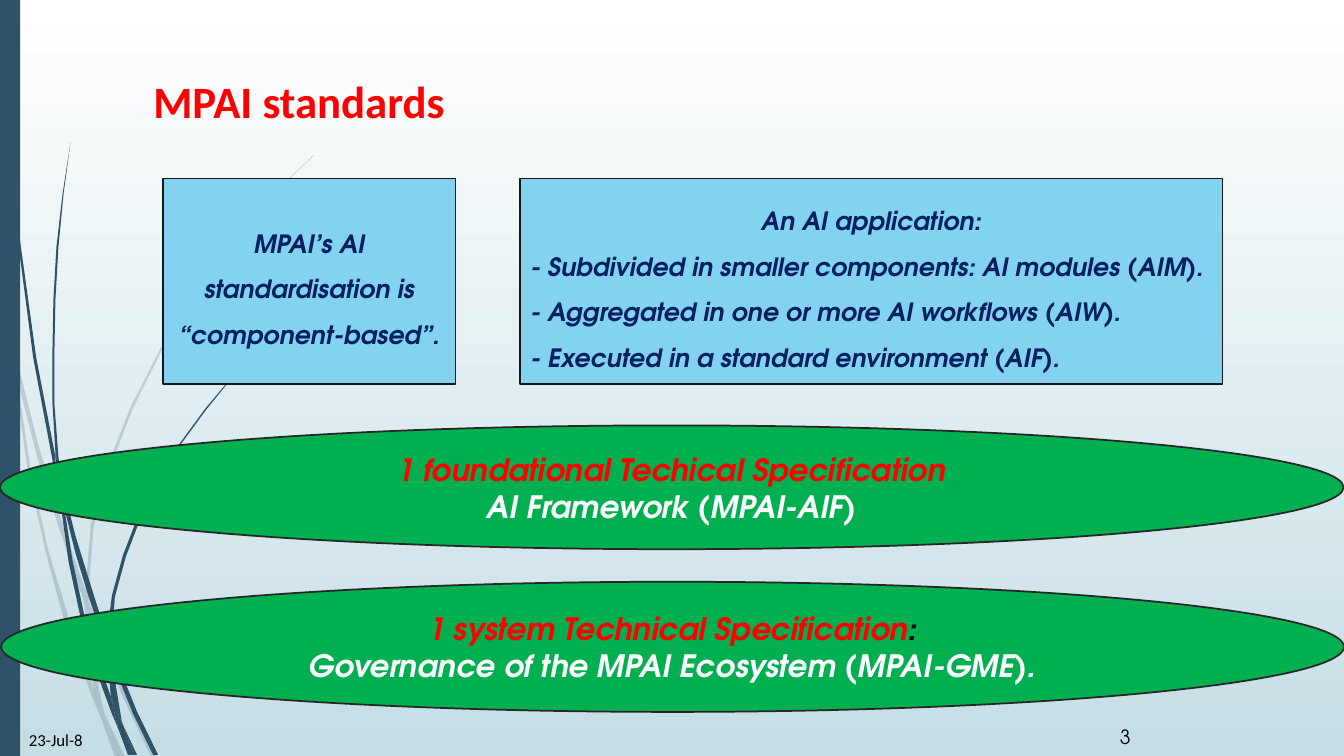
from lxml import etree
from pptx import Presentation
from pptx.dml.color import RGBColor as RGB
from pptx.enum.shapes import MSO_SHAPE as SHAPE
from pptx.enum.text import MSO_ANCHOR as ANCHOR, MSO_AUTO_SIZE as AUTO, PP_ALIGN as ALIGN
from pptx.oxml.ns import qn
from pptx.util import Cm, Pt

COLORS = {
    "white": "FFFFFF", "mist": "C5DEE5", "slate": "2E5369", "red": "FF0000",
    "black": "000000", "green": "00B050", "sky": "83D2F0", "navy": "002060",
    "oval_line": "272727", "box_line": "171717",
}
BODY, PLAIN = "TeX Gyre Adventor", "Calibri"

# Outlines of the grass blades: x, y pairs in hundredths of an inch
PALE_BLADES = [
    [11, 350, 9, 322, 0, 282, 0, 299, 10, 344],
    [58, 522, 84, 599, 85, 586, 62, 520, 37, 438, 14, 345, 17, 376, 36, 450],
    [92, 607, 88, 596, 88, 610, 123, 694, 150, 751, 155, 751, 127, 692],
    [119, 751, 124, 751, 105, 711],
    [93, 683, 70, 619, 48, 546, 31, 469, 17, 376, 11, 350, 28, 470, 45, 546,
     65, 621, 92, 693, 101, 714, 99, 707],
    [84, 599, 87, 646, 93, 683, 96, 692, 105, 711, 103, 706, 91, 646, 88, 610, 88, 608],
    [88, 584, 93, 522, 110, 462, 132, 405, 160, 349, 193, 295, 229, 245, 268, 198,
     290, 175, 312, 154, 312, 153, 289, 175, 268, 197, 228, 244, 191, 294, 158, 348,
     130, 403, 107, 461, 90, 521, 85, 584, 85, 586, 88, 596],
    [101, 714, 114, 751, 119, 751],
    [88, 608, 88, 610, 88, 596, 85, 586, 84, 599],
    [96, 692, 93, 683, 99, 707, 101, 714, 119, 751, 105, 711],
]
DARK_BLADES = [
    [7, 110, 17, 233, 33, 355, 56, 477, 57, 481, 55, 457, 55, 453, 36, 355,
     19, 232, 8, 109, 5, 48, 4, 0, 3, 0, 4, 48],
    [88, 592, 106, 645, 106, 633, 106, 631, 93, 590, 75, 532, 60, 472, 64, 505, 75, 549],
    [113, 649, 110, 641, 111, 656, 132, 708, 152, 749, 157, 749, 136, 706],
    [110, 691, 98, 657, 83, 607, 72, 556, 64, 505, 57, 477, 68, 557, 79, 608,
     93, 659, 111, 708, 117, 722, 116, 717],
    [60, 472, 58, 453, 54, 401, 54, 349, 55, 297, 58, 245, 63, 193, 70, 141,
     62, 193, 56, 245, 53, 297, 52, 349, 52, 400, 55, 449],
    [133, 749, 136, 749, 122, 719],
    [57, 477, 64, 505, 60, 472, 55, 449, 55, 453],
    [111, 633, 114, 592, 125, 552, 140, 513, 158, 476, 180, 440, 205, 406, 231, 374,
     245, 359, 261, 344, 260, 344, 245, 358, 231, 373, 204, 405, 179, 439, 156, 474,
     137, 512, 122, 551, 111, 591, 106, 631, 110, 641],
    [117, 722, 127, 749, 131, 749],
    [106, 645, 110, 691, 116, 706, 122, 719, 121, 716, 111, 656, 109, 651],
    [106, 645, 109, 651, 111, 656, 110, 641, 106, 631, 106, 633],
    [116, 706, 110, 691, 116, 717, 117, 722, 130, 749, 133, 749, 122, 719],
]


def rgb(name):
    return RGB.from_string(COLORS[name])


class Deck:
    """Holds the style and the slide being drawn."""

    def __init__(self):
        self.prs = Presentation()
        self.prs.slide_width, self.prs.slide_height = Cm(33.87), Cm(19.05)
        self.s = self.prs.slides.add_slide(self.prs.slide_layouts[5])

    def background(self, top, bottom):
        fill = self.s.background.fill
        fill.gradient()
        fill.gradient_angle = 270
        for stop, name in zip(fill.gradient_stops, (top, bottom)):
            stop.color.rgb = rgb(name)

    def paint(self, sp, fill, line=None):
        sp.shadow.inherit = False
        sp.fill.solid()
        sp.fill.fore_color.rgb = rgb(fill)
        if line:
            sp.line.color.rgb = rgb(line)
            sp.line.width = Pt(1.25)
        else:
            sp.line.fill.background()

    def blades(self, outlines, opacity=100):
        group = self.s.shapes.add_group_shape()
        for flat in outlines:
            points = list(zip(flat[::2], flat[1::2]))
            builder = group.shapes.build_freeform(*points[0], scale=Cm(2.54) / 100)
            builder.add_line_segments(points[1:], close=True)
            sp = builder.convert_to_shape()
            self.paint(sp, "slate")
            if opacity < 100:
                color = sp.element.spPr.find(qn("a:solidFill"))[0]
                etree.SubElement(color, qn("a:alpha")).set("val", str(opacity * 1000))

    def fill_text(self, sp, paragraphs, size, font, strong=False, spacing=None):
        """Each paragraph is an alignment followed by (text, colour) runs."""
        tf = sp.text_frame
        tf.word_wrap = True
        for i, (align, *runs) in enumerate(paragraphs):
            p = tf.add_paragraph() if i else tf.paragraphs[0]
            p.alignment = align
            p.line_spacing = spacing
            for text, color in runs:
                r = p.add_run()
                r.text = text
                r.font.size, r.font.name = Pt(size), font
                r.font.bold, r.font.italic = strong, strong
                r.font.color.rgb = rgb(color)

    def title(self, text, *box):
        sp = self.s.shapes.title
        sp.left, sp.top, sp.width, sp.height = map(Cm, box)
        self.fill_text(sp, [(ALIGN.LEFT, (text, "red"))], 32, PLAIN)
        sp.text_frame.auto_size = AUTO.NONE
        sp.text_frame.vertical_anchor = ANCHOR.TOP
        sp.text_frame.paragraphs[0].runs[0].font.bold = True

    def label(self, text, size, font, *box):
        sp = self.s.shapes.add_textbox(*map(Cm, box))
        sp.text_frame.margin_top = Cm(0.1)
        self.fill_text(sp, [(ALIGN.LEFT, (text, "black"))], size, font)

    def shape(self, kind, box, fill, line=None):
        sp = self.s.shapes.add_shape(kind, *map(Cm, box))
        self.paint(sp, fill, line)
        return sp

    def oval(self, box, *lines):
        sp = self.shape(SHAPE.OVAL, box, "green", "oval_line")
        sp.text_frame.vertical_anchor = ANCHOR.MIDDLE
        self.fill_text(sp, [(ALIGN.CENTER, *runs) for runs in lines], 22, BODY, True)

    def card(self, left, width, heading, items=()):
        sp = self.shape(SHAPE.RECTANGLE, (left, 4.5, width, 5.18), "sky", "box_line")
        sp.text_frame.vertical_anchor = ANCHOR.MIDDLE
        paragraphs = [(ALIGN.CENTER, (heading, "navy"))]
        paragraphs += [(ALIGN.LEFT, (item, "navy")) for item in items]
        self.fill_text(sp, paragraphs, 18, BODY, True, 1.5)


def main():
    deck = Deck()

    # Backdrop
    deck.background("white", "mist")
    deck.blades(PALE_BLADES, 20)
    deck.blades(DARK_BLADES)
    deck.shape(SHAPE.RECTANGLE, (0, 0, 0.51, 19.05), "slate")

    # Title, date and page number
    deck.title("MPAI standards", 3.61, 1.73, 28.35, 3.56)
    deck.label("23-Jul-8", 12, PLAIN, 0.48, 18.29, 2.77, 1.02)
    deck.label("3", 14, BODY, 27.97, 18.16, 1.55, 0.8)

    # Foundation, approach and system specification
    deck.oval((0, 10.72, 33.86, 3.12),
              [("1 foundational Techical Specification", "red")],
              [("AI Framework (MPAI-AIF)", "white")])
    deck.card(4.11, 7.37, "MPAI’s AI standardisation is “component-based”.")
    deck.card(13.11, 17.7, "An AI application:", [
        "- Subdivided in smaller components: AI modules (AIM).",
        "- Aggregated in one or more AI workflows (AIW).",
        "- Executed in a standard environment (AIF).",
    ])
    deck.oval((0.03, 14.66, 33.84, 3.28),
              [("1 system Technical Specification", "red"), (":", "black")],
              [("Governance of the MPAI Ecosystem (MPAI-GME).", "white")])

    deck.prs.save("out.pptx")


if __name__ == "__main__":
    main()
